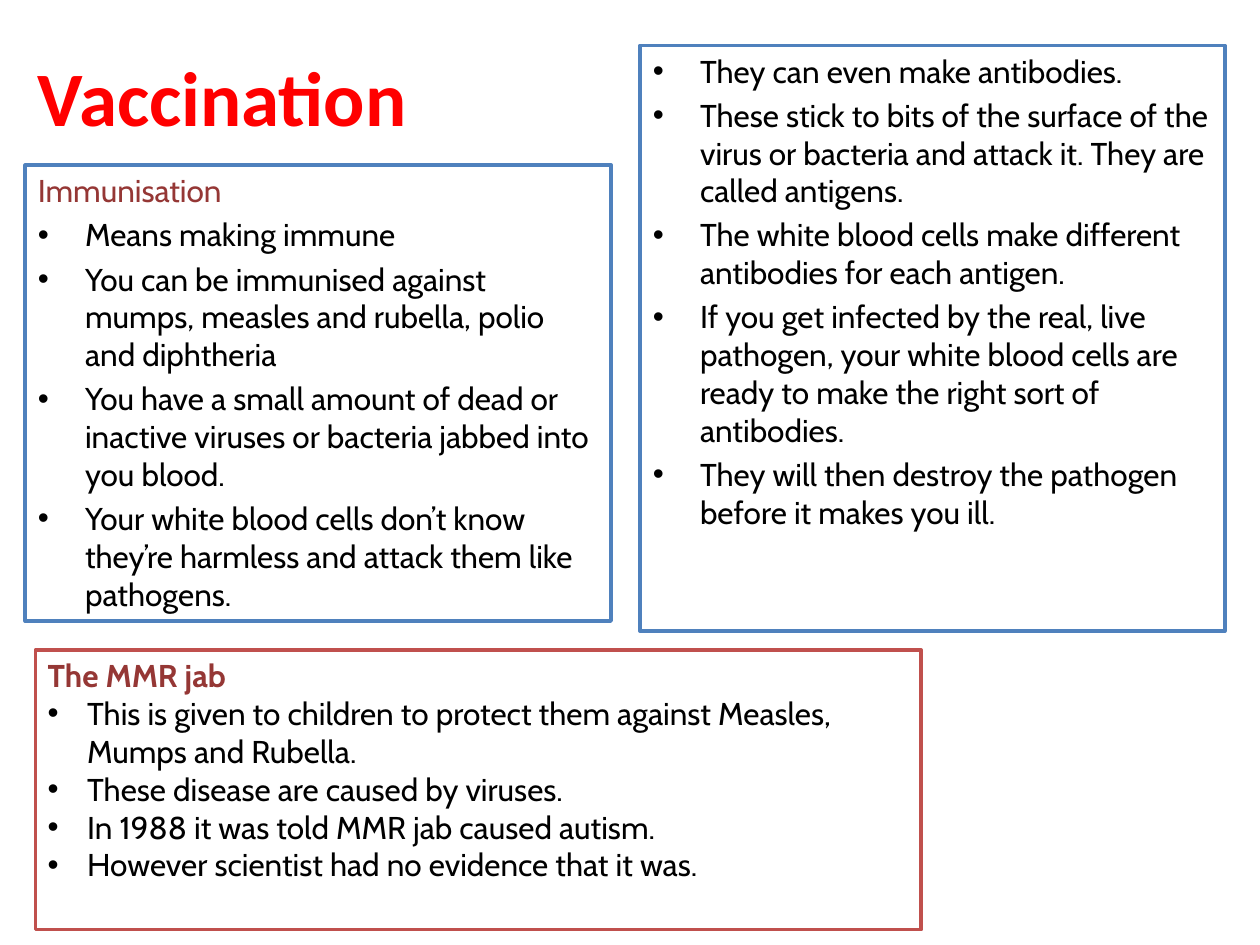
from dataclasses import dataclass

from lxml import etree
from pptx import Presentation
from pptx.dml.color import RGBColor
from pptx.enum.text import MSO_ANCHOR, MSO_AUTO_SIZE, PP_ALIGN
from pptx.oxml.ns import qn
from pptx.util import Pt

LEFT = PP_ALIGN.LEFT
TOP = MSO_ANCHOR.TOP
MIDDLE = MSO_ANCHOR.MIDDLE
NO_AUTOFIT = MSO_AUTO_SIZE.NONE
TWO_CONTENT_LAYOUT = 3


@dataclass(frozen=True)
class Theme:
    title_font: str = "Calibri"
    body_font: str = "Cabin"
    title_size: float = 44
    body_size: float = 18
    line_width: float = 2
    title: RGBColor = RGBColor(0xFF, 0x00, 0x00)
    heading: RGBColor = RGBColor(0x95, 0x37, 0x35)
    text: RGBColor = RGBColor(0x00, 0x00, 0x00)
    paper: RGBColor = RGBColor(0xFF, 0xFF, 0xFF)
    blue: RGBColor = RGBColor(0x4F, 0x81, 0xBD)
    red: RGBColor = RGBColor(0xC0, 0x50, 0x4D)


THEME = Theme()

IMMUNISATION = [
    "Means making immune",
    "You can be immunised against mumps, measles and rubella, polio and diphtheria",
    "You have a small amount of dead or inactive viruses or bacteria jabbed into you blood.",
    "Your white blood cells don’t know they’re harmless and attack them like pathogens.",
]
ANTIBODIES = [
    "They can even make antibodies.",
    "These stick to bits of the surface of the virus or bacteria and attack it. "
    "They are called antigens.",
    "The white blood cells make different antibodies for each antigen.",
    "If you get infected by the real, live pathogen, your white blood cells are "
    "ready to make the right sort of antibodies.",
    "They will then destroy the pathogen before it makes you ill.",
]
MMR_JAB = [
    "This is given to children to protect them against Measles, Mumps and Rubella.",
    "These disease are caused by viruses.",
    "In 1988 it was told MMR jab caused autism.",
    "However scientist had no evidence that it was.",
]


def place(box, left, top, width, height):
    box.left, box.top = Pt(left), Pt(top)
    box.width, box.height = Pt(width), Pt(height)


def add_span(para, text, font, size, color, bold=False):
    span = para.add_run()
    span.text = text
    span.font.name = font
    span.font.size = Pt(size)
    span.font.bold = bold
    span.font.color.rgb = color


def set_bullet(para, indent, bulleted):
    """Hang the paragraph by indent, with a dot or with no bullet at all."""
    properties = para._p.get_or_add_pPr()
    properties.set("marL", str(Pt(indent)))
    properties.set("indent", str(-Pt(indent)))
    if bulleted:
        etree.SubElement(properties, qn("a:buFont"), typeface="Arial")
        etree.SubElement(properties, qn("a:buChar"), char="•")
    else:
        etree.SubElement(properties, qn("a:buNone"))


def fill_title(box, text):
    frame = box.text_frame
    frame.auto_size = NO_AUTOFIT
    frame.vertical_anchor = MIDDLE
    para = frame.paragraphs[0]
    para.alignment = LEFT
    add_span(para, text, THEME.title_font, THEME.title_size, THEME.title, bold=True)


def frame_box(box, line_color):
    box.fill.solid()
    box.fill.fore_color.rgb = THEME.paper
    box.line.color.rgb = line_color
    box.line.width = Pt(THEME.line_width)


def fill_list(box, items, indent, gap, heading=None, bold_heading=False):
    """Write an optional heading and bulleted items, gap points apart."""
    frame = box.text_frame
    frame.word_wrap = True
    frame.auto_size = NO_AUTOFIT
    frame.vertical_anchor = TOP
    lines = [heading, *items] if heading else items
    for index, text in enumerate(lines):
        para = frame.add_paragraph() if index else frame.paragraphs[0]
        para.space_before = Pt(gap)
        is_heading = text == heading
        set_bullet(para, indent, not is_heading)
        color = THEME.heading if is_heading else THEME.text
        add_span(para, text, THEME.body_font, THEME.body_size, color,
                 bold=is_heading and bold_heading)


def main():
    deck = Presentation()
    deck.slide_width, deck.slide_height = Pt(720), Pt(540)
    page = deck.slides.add_slide(deck.slide_layouts[TWO_CONTENT_LAYOUT])
    title, immunisation, antibodies = page.placeholders

    place(title, 14.4, 9.4, 648, 90)
    fill_title(title, "Vaccination")

    place(immunisation, 14.4, 94.3, 334.8, 260.6)
    frame_box(immunisation, THEME.blue)
    fill_list(immunisation, IMMUNISATION, indent=27, gap=3.6, heading="Immunisation")

    place(antibodies, 365.8, 25.9, 334.1, 334.8)
    frame_box(antibodies, THEME.blue)
    fill_list(antibodies, ANTIBODIES, indent=27, gap=3.6)

    mmr_jab = page.shapes.add_textbox(Pt(20.2), Pt(371.5), Pt(506.2), Pt(159.8))
    frame_box(mmr_jab, THEME.red)
    fill_list(mmr_jab, MMR_JAB, indent=22.5, gap=0, heading="The MMR jab",
              bold_heading=True)

    deck.save("out.pptx")


if __name__ == "__main__":
    main()
